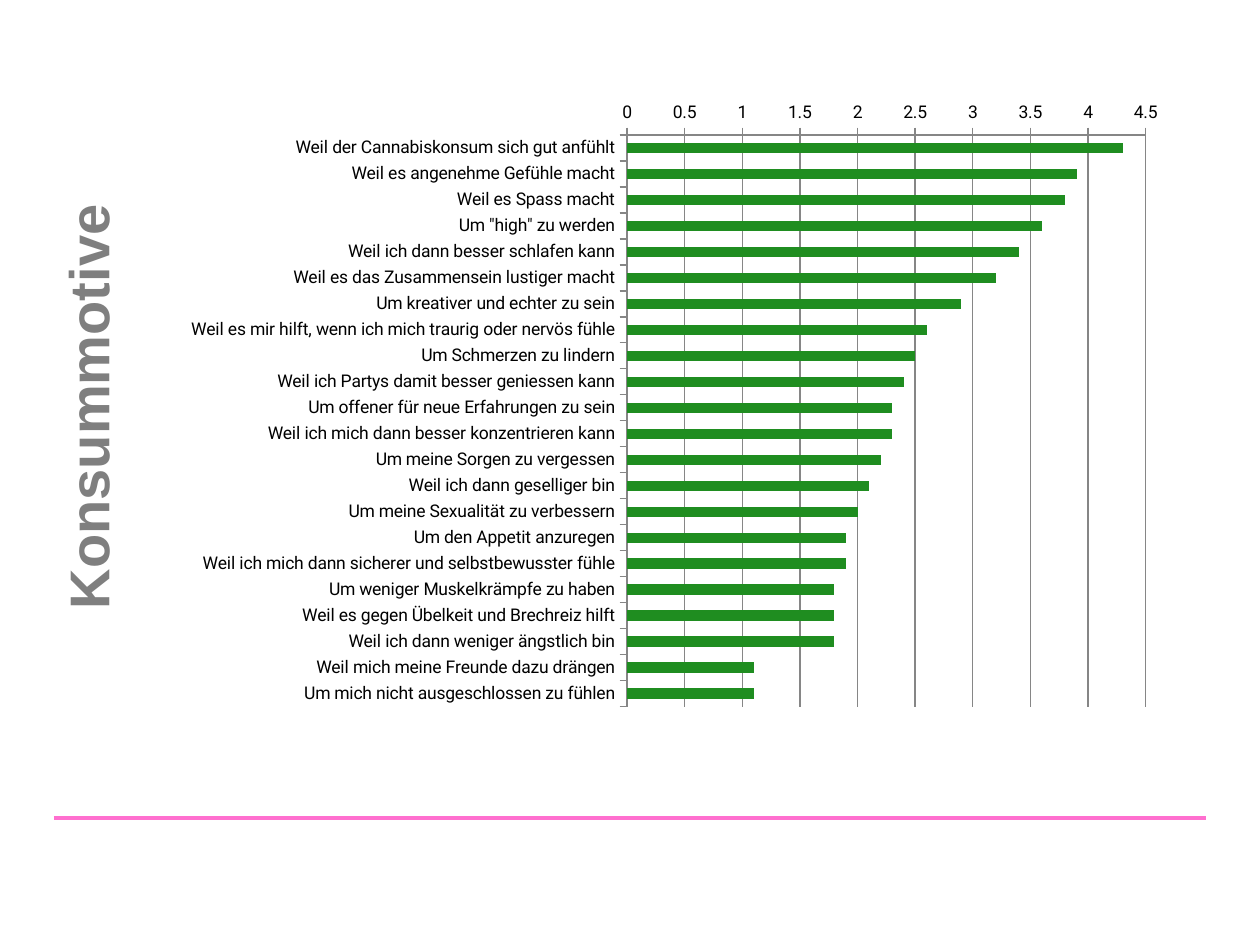
from dataclasses import dataclass

from lxml import etree
from pptx import Presentation
from pptx import util as u
from pptx.chart.data import CategoryChartData
from pptx.dml.color import RGBColor
from pptx.enum import chart as ch, shapes, text
from pptx.oxml import ns

PX_PER_INCH = 126
COLORS = {"bar": "1F8D20", "title": "7F7F7F", "rule": "FF6FCF",
          "axis": "868686", "label": "000000"}


@dataclass
class Box:
    left: int
    top: int
    width: int
    height: int

    def emu(self) -> list[int]:
        return [px(n) for n in (self.left, self.top, self.width, self.height)]


@dataclass
class Motive:
    reason: str
    score: float


CHART = Box(171, 91, 1007, 629)
PLOT = Box(627, 135, 519, 572)
TITLE = Box(-129, 365, 433, 81)

MOTIVES = [
    Motive("Weil der Cannabiskonsum sich gut anfühlt", 4.3),
    Motive("Weil es angenehme Gefühle macht", 3.9),
    Motive("Weil es Spass macht", 3.8),
    Motive('Um "high" zu werden', 3.6),
    Motive("Weil ich dann besser schlafen kann", 3.4),
    Motive("Weil es das Zusammensein lustiger macht", 3.2),
    Motive("Um kreativer und echter zu sein", 2.9),
    Motive("Weil es mir hilft, wenn ich mich traurig oder nervös fühle", 2.6),
    Motive("Um Schmerzen zu lindern", 2.5),
    Motive("Weil ich Partys damit besser geniessen kann", 2.4),
    Motive("Um offener für neue Erfahrungen zu sein", 2.3),
    Motive("Weil ich mich dann besser konzentrieren kann", 2.3),
    Motive("Um meine Sorgen zu vergessen", 2.2),
    Motive("Weil ich dann geselliger bin", 2.1),
    Motive("Um meine Sexualität zu verbessern", 2.0),
    Motive("Um den Appetit anzuregen", 1.9),
    Motive("Weil ich mich dann sicherer und selbstbewusster fühle", 1.9),
    Motive("Um weniger Muskelkrämpfe zu haben", 1.8),
    Motive("Weil es gegen Übelkeit und Brechreiz hilft", 1.8),
    Motive("Weil ich dann weniger ängstlich bin", 1.8),
    Motive("Weil mich meine Freunde dazu drängen", 1.1),
    Motive("Um mich nicht ausgeschlossen zu fühlen", 1.1),
]


def px(n: int) -> int:
    return u.Inches(n / PX_PER_INCH)


def color(name: str) -> RGBColor:
    return RGBColor.from_string(COLORS[name])


def add_title(slide) -> None:
    title = slide.shapes.title
    title.left, title.top, title.width, title.height = TITLE.emu()
    title.rotation = 270
    frame = title.text_frame
    frame.text = "Konsummotive"
    frame.word_wrap = False
    frame.auto_size = text.MSO_AUTO_SIZE.SHAPE_TO_FIT_TEXT
    frame.vertical_anchor = text.MSO_ANCHOR.TOP
    frame.paragraphs[0].alignment = text.PP_ALIGN.LEFT
    font = frame.paragraphs[0].runs[0].font
    font.name, font.size, font.bold = "Arial", u.Pt(32), True
    font.color.rgb = color("title")


def add_rule(slide) -> None:
    rule = slide.shapes.add_connector(
        shapes.MSO_CONNECTOR.STRAIGHT, px(54), px(818), px(1206), px(818))
    rule.line.color.rgb = color("rule")
    rule.line.width = u.Pt(2)
    etree.SubElement(rule._element.spPr, ns.qn("a:effectLst"))


def style_line(line) -> None:
    line.color.rgb = color("axis")
    line.width = u.Pt(0.75)


def place_plot(chart) -> None:
    """Fix the inner plot area, as fractions of the chart frame."""
    area = chart._chartSpace.chart.plotArea
    for old in area.findall(ns.qn("c:layout")):
        area.remove(old)
    layout = etree.Element(ns.qn("c:layout"))
    manual = etree.SubElement(layout, ns.qn("c:manualLayout"))
    settings = {
        "layoutTarget": "inner", "xMode": "edge", "yMode": "edge",
        "x": round((PLOT.left - CHART.left) / CHART.width, 3),
        "y": round((PLOT.top - CHART.top) / CHART.height, 3),
        "w": round(PLOT.width / CHART.width, 3),
        "h": round(PLOT.height / CHART.height, 3),
    }
    for tag, value in settings.items():
        etree.SubElement(manual, ns.qn(f"c:{tag}")).set("val", str(value))
    area.insert(0, layout)


def add_motive_chart(slide) -> None:
    data = CategoryChartData()
    data.categories = [motive.reason for motive in MOTIVES]
    data.add_series("Series 1", [motive.score for motive in MOTIVES])
    chart = slide.shapes.add_chart(
        ch.XL_CHART_TYPE.BAR_CLUSTERED, *CHART.emu(), data).chart
    chart.has_legend = chart.has_title = False
    chart.font.name, chart.font.size = "Roboto", u.Pt(10)
    chart.font.color.rgb = color("label")
    place_plot(chart)

    bars = chart.plots[0]
    bars.gap_width, bars.vary_by_categories = 150, False
    fill = bars.series[0].format.fill
    fill.solid()
    fill.fore_color.rgb = color("bar")

    reasons, scores = chart.category_axis, chart.value_axis
    reasons.reverse_order = True
    scores.minimum_scale, scores.maximum_scale = 0, 4.5
    scores.major_unit = 0.5
    scores.has_major_gridlines = True
    style_line(scores.major_gridlines.format.line)
    for axis in (reasons, scores):
        axis.major_tick_mark = ch.XL_TICK_MARK.OUTSIDE
        axis.minor_tick_mark = ch.XL_TICK_MARK.NONE
        style_line(axis.format.line)


def main() -> None:
    deck = Presentation()
    deck.slide_width, deck.slide_height = px(1260), px(945)
    slide = deck.slides.add_slide(deck.slide_layouts.get_by_name("Title Only"))
    add_rule(slide)
    add_motive_chart(slide)
    add_title(slide)
    deck.save("out.pptx")


if __name__ == "__main__":
    main()
